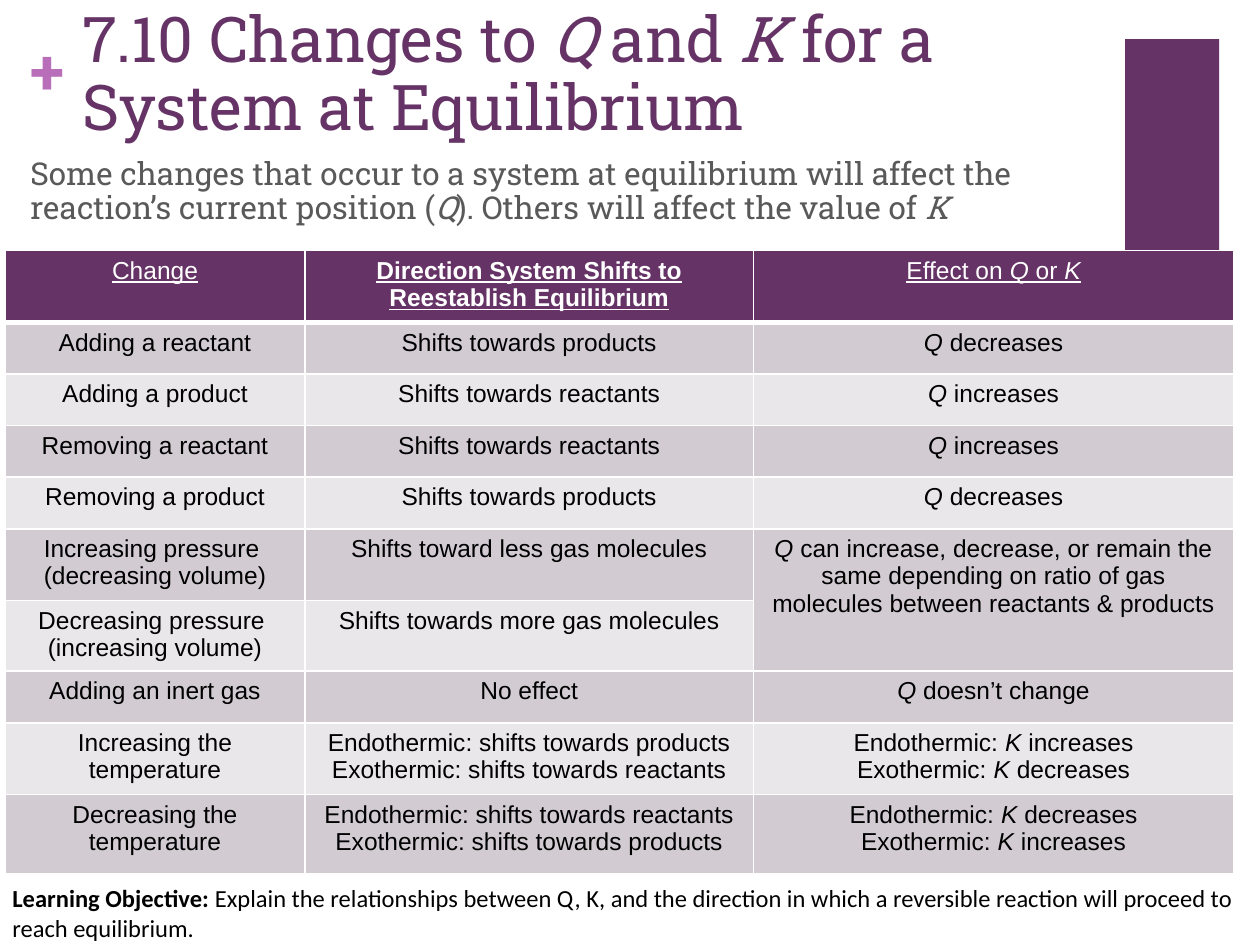
from pptx import Presentation
from pptx.util import Cm, Pt
from pptx.dml.color import RGBColor as Rgb
from pptx.enum.shapes import MSO_SHAPE as Kind
from pptx.enum.text import PP_ALIGN as Align, MSO_ANCHOR as Anchor, MSO_AUTO_SIZE as Auto
from pptx.oxml.ns import qn
from lxml.etree import SubElement as Sub

# Content: text between asterisks takes the accent style (italic by default)
TITLE = "7.10 Changes to *Q* and *K *for a System at Equilibrium"
INTRO = ("Some changes that occur to a system at equilibrium will affect the "
         "reaction’s current position (*Q*). Others will affect the value of *K*")
GOAL = ("*Learning Objective: *Explain the relationships between Q, K, and the direction "
        "in which a reversible reaction will proceed to reach equilibrium.")
HEAD = ("Change", "Direction System Shifts to Reestablish Equilibrium", "Effect on *Q* or *K*")
ROWS = [
    ("Adding a reactant", "Shifts towards products", "*Q* decreases"),
    ("Adding a product", "Shifts towards reactants", "*Q* increases"),
    ("Removing a reactant", "Shifts towards reactants", "*Q* increases"),
    ("Removing a product", "Shifts towards products", "*Q* decreases"),
    ("Increasing pressure \n(decreasing volume)", "Shifts toward less gas molecules",
     "*Q* can increase, decrease, or remain the same depending on ratio of gas "
     "molecules between reactants & products"),
    ("Decreasing pressure \n(increasing volume)", "Shifts towards more gas molecules", None),
    ("Adding an inert gas", "No effect", "*Q *doesn’t change"),
    ("Increasing the temperature",
     "Endothermic: shifts towards products\nExothermic: shifts towards reactants",
     "Endothermic: *K *increases\nExothermic: *K *decreases"),
    ("Decreasing the temperature",
     "Endothermic: shifts towards reactants\nExothermic: shifts towards products",
     "Endothermic: *K *decreases\nExothermic: *K *increases"),
]
WIDTHS = (6.05, 9.04, 9.68)
HEIGHTS = (1.45, 1.04, 1.04, 1.04, 1.04, 1.45, 1.42, 1.04, 1.45, 1.6)
HUES = {"plum": "663366", "lilac": "B86EB8", "gray": "595959", "white": "FFFFFF",
        "black": "000000", "dark": "D2CCD2", "light": "EAE7EA"}
SLAB = "Roboto Slab"


def hue(name):
    return Rgb.from_string(HUES[name])


def write(frame, text, size=14, font="Arial", color="black", bold=False, line=False,
          align=Align.LEFT, accent="italic", gap=None):
    for i, part in enumerate(text.split("\n")):
        para = frame.paragraphs[0] if i == 0 else frame.add_paragraph()
        props = para._p.get_or_add_pPr()
        props.set("marL", "0")
        props.set("indent", "0")
        Sub(props, qn("a:buNone"))
        para.alignment = align
        para.space_before = Pt(0)
        para.line_spacing = gap
        for j, piece in enumerate(part.split("*")):
            if not piece:
                continue
            run = para.add_run()
            run.text = piece
            face = run.font
            face.size, face.name, face.bold = Pt(size), font, bold
            face.italic, face.underline = False, line
            face.color.rgb = hue(color)
            if j % 2:
                setattr(face, accent, True)


def place(shape, *box):
    shape.left, shape.top, shape.width, shape.height = map(Cm, box)
    frame = shape.text_frame
    frame.word_wrap = True
    frame.auto_size = Auto.NONE
    frame.vertical_anchor = Anchor.TOP
    return frame


def edge(cell, base):
    props = cell._tc.get_or_add_tcPr()
    for i, (side, wide) in enumerate((("L", 1), ("R", 1), ("T", 1), ("B", base))):
        rule = props.makeelement(qn("a:ln" + side), {"w": str(Pt(wide))})
        fill = Sub(rule, qn("a:solidFill"))
        Sub(fill, qn("a:srgbClr"), val=HUES["white"])
        props.insert(i, rule)


deck = Presentation()
deck.slide_width, deck.slide_height = Cm(25.4), Cm(19.05)
slide = deck.slides.add_slide(deck.slide_layouts[1])
shapes = slide.shapes

# Plus sign and side block
plus = place(shapes.add_textbox(0, 0, 0, 0), 0.61, 0.64, 0.74, 1.55)
plus.margin_left = plus.margin_right = plus.margin_top = plus.margin_bottom = 0
plus.word_wrap = False
write(plus, "+", size=36, font=SLAB, color="lilac", bold=True)
block = shapes.add_shape(Kind.RECTANGLE, Cm(22.68), Cm(0.79), Cm(1.9), Cm(4.45))
block.shadow.inherit = False
block.fill.solid()
block.fill.fore_color.rgb = hue("plum")
block.line.fill.background()

# Title and introduction
write(place(shapes.title, 1.4, 0.03, 20.98, 3.1), TITLE,
      size=36, font=SLAB, color="plum", gap=0.9)
write(place(slide.placeholders[1], 0.36, 3.07, 22.12, 1.78), INTRO,
      size=18, font=SLAB, color="gray", gap=0.9)

# Table of changes
table = shapes.add_table(len(HEIGHTS), len(WIDTHS), Cm(0.1), Cm(5.05),
                         Cm(sum(WIDTHS)), Cm(sum(HEIGHTS))).table
for col, wide in zip(table.columns, WIDTHS):
    col.width = Cm(wide)
for row, high in zip(table.rows, HEIGHTS):
    row.height = Cm(high)
for r, row in enumerate([HEAD] + ROWS):
    top = r == 0
    shade = "plum" if top else "dark" if r % 2 else "light"
    for c, text in enumerate(row):
        cell = table.cell(r, c)
        cell.fill.solid()
        cell.fill.fore_color.rgb = hue(shade)
        edge(cell, 3 if top else 1)
        if text is None:
            table.cell(r - 1, c).merge(cell)
        else:
            write(cell.text_frame, text, color="white" if top else "black",
                  bold=top and c == 1, line=top, align=Align.CENTER)

# Learning objective
write(place(shapes.add_textbox(0, 0, 0, 0), 0, 17.68, 25.4, 1.78), GOAL,
      font="Calibri", accent="bold")

deck.save("out.pptx")
